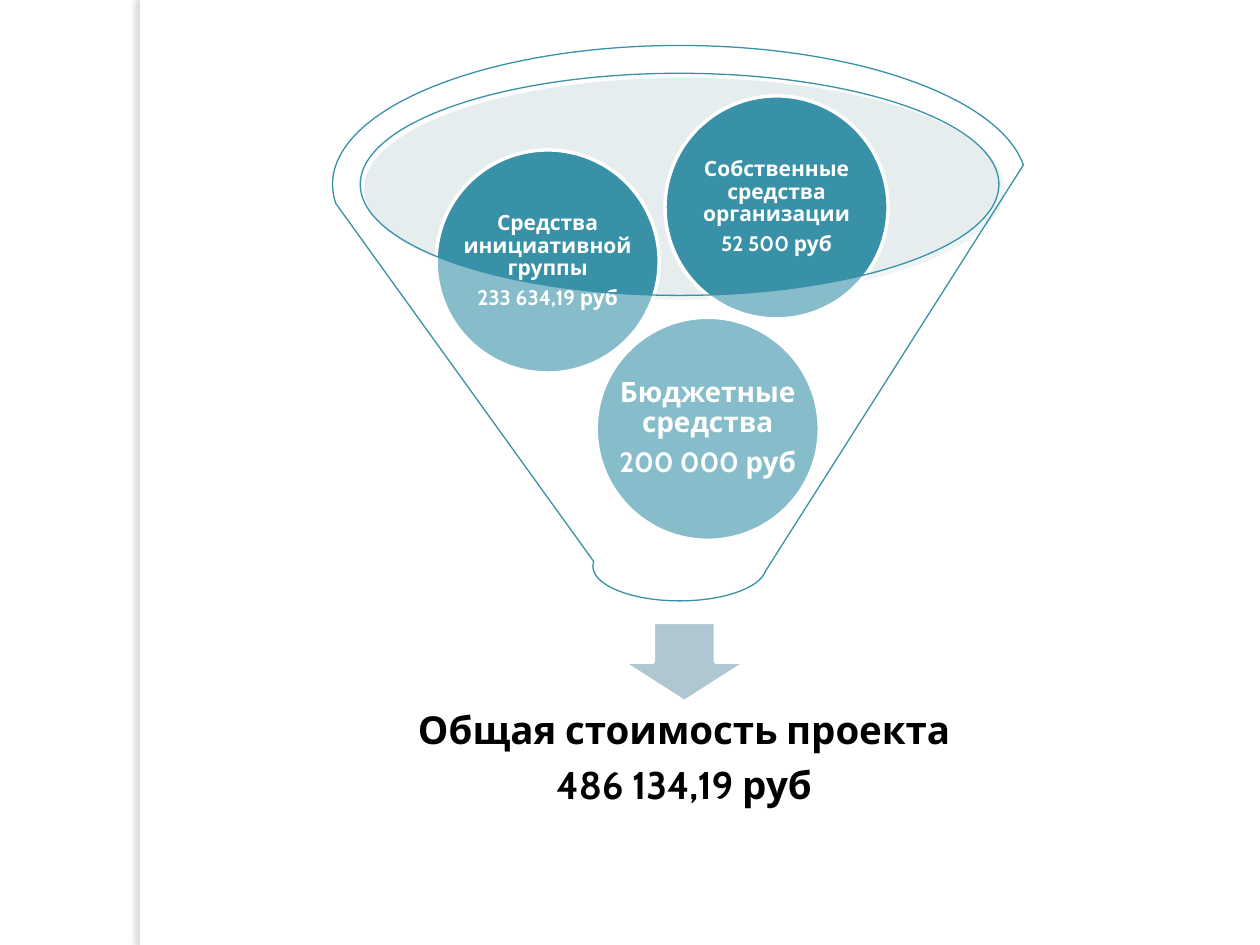
"""Build a slide with a funnel of funding sources and the total project cost."""
from lxml.etree import SubElement
from pptx import Presentation
from pptx.dml.color import RGBColor
from pptx.enum.shapes import MSO_SHAPE
from pptx.enum.text import MSO_ANCHOR, PP_ALIGN
from pptx.oxml import parse_xml
from pptx.oxml.ns import nsdecls, qn
from pptx.util import Pt

WHITE = RGBColor(0xFF, 0xFF, 0xFF)
BLACK = RGBColor(0, 0, 0)
TEAL = RGBColor(0x38, 0x91, 0xA7)
PALE_TEAL = RGBColor(0xBF, 0xD2, 0xD9)
ARROW_BLUE = RGBColor(0xAF, 0xC7, 0xD0)
DIAMETER = 127.5


def add_figure(page, kind, frame, fill, line=None, width=0, opacity=100):
    figure = page.shapes.add_shape(kind, *map(Pt, frame))
    figure.shadow.inherit = False
    figure.fill.solid()
    figure.fill.fore_color.rgb = fill
    if opacity < 100:
        color = figure.fill._xPr.find(qn("a:solidFill"))[0]
        SubElement(color, qn("a:alpha"), val=str(opacity * 1000))
    if line is None:
        figure.line.fill.background()
    else:
        figure.line.color.rgb = line
        figure.line.width = Pt(width)
    return figure


def write(page, text, frame, size, color, inset):
    box = page.shapes.add_textbox(*map(Pt, frame))
    words = box.text_frame
    words.word_wrap = True
    words.vertical_anchor = MSO_ANCHOR.MIDDLE
    words.margin_left = words.margin_right = Pt(inset)
    words.margin_top = words.margin_bottom = Pt(inset)
    words.text = text
    for para in words.paragraphs:
        para.alignment = PP_ALIGN.CENTER
        para.line_spacing = 0.9
        para.space_after = Pt(size * 0.35)
        for span in para.runs:
            span.font.name = "Cabin"
            span.font.size = Pt(size)
            span.font.bold = True
            span.font.color.rgb = color


deck = Presentation()
deck.slide_width, deck.slide_height = Pt(720), Pt(540)
page = deck.slides.add_slide(deck.slide_layouts[6])

side_strip = add_figure(page, MSO_SHAPE.RECTANGLE, (80, 0, 5.7, 540), WHITE)
effects = side_strip._element.spPr.find(qn("a:effectLst"))
effects.append(parse_xml(
    f'<a:outerShdw {nsdecls("a")} blurRad="38100" dist="38100" dir="10800000" '
    'algn="tl" rotWithShape="0"><a:srgbClr val="736F63">'
    '<a:alpha val="25000"/></a:srgbClr></a:outerShdw>'))

add_figure(page, MSO_SHAPE.OVAL, (208, 44.5, 365.8, 126.8), PALE_TEAL, opacity=40)
add_figure(page, MSO_SHAPE.DOWN_ARROW, (355.7, 355.7, 70.8, 45.3), ARROW_BLUE,
           line=WHITE, width=2)
write(page, "Общая стоимость проекта\n486 134,19 руб", (221, 391.7, 340, 85),
      size=22, color=BLACK, inset=12.3)

sources = [
    ("Бюджетные средства\n200 000 руб", 340.7, 181.3, 16),
    ("Средства инициативной группы\n233 634,19 руб", 249.2, 85.7, 12),
    ("Собственные средства организации\n52 500 руб", 380, 54.8, 12),
]
for text, left, top, size in sources:
    frame = (left, top, DIAMETER, DIAMETER)
    add_figure(page, MSO_SHAPE.OVAL, frame, TEAL, line=WHITE, width=2)
    write(page, text, frame, size=size, color=WHITE, inset=1.5)

add_figure(page, MSO_SHAPE.FUNNEL, (190, 26, 396.7, 317.4), WHITE,
           line=TEAL, width=0.75, opacity=40)

deck.save("out.pptx")
